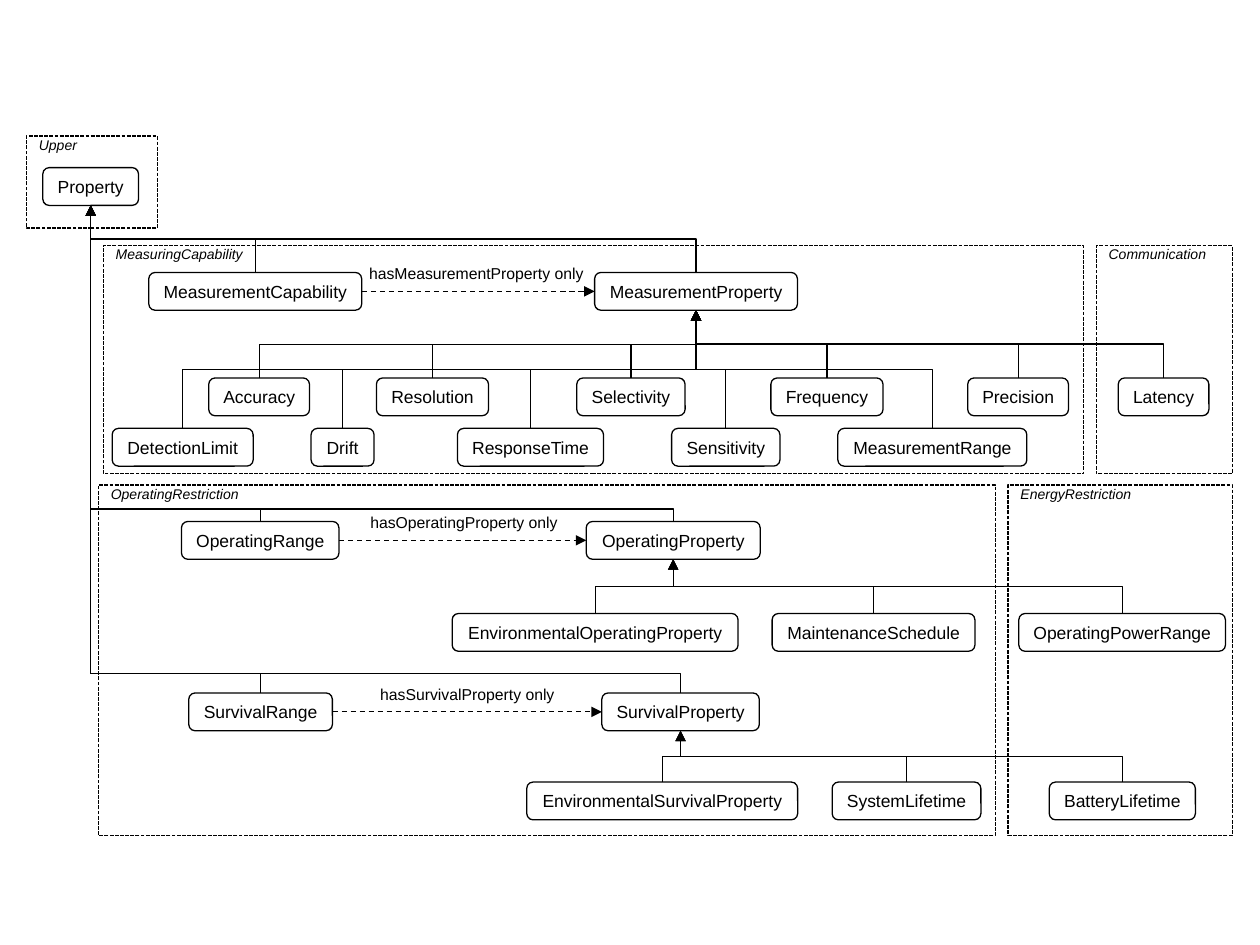
"""Build an ontology diagram of measuring, operating and survival properties."""
from lxml import etree
from pptx import Presentation
from pptx import util as u
from pptx.dml.color import RGBColor
from pptx.enum import dml, shapes, text
from pptx.oxml import ns

INK = "000000"
NODE_HEIGHT = 21.6
FRAME = {"word_wrap": True, "margin_top": 0, "vertical_anchor": text.MSO_ANCHOR.TOP}
FIT = {"word_wrap": False, "auto_size": text.MSO_AUTO_SIZE.SHAPE_TO_FIT_TEXT}
NODE = {**FIT, "vertical_anchor": text.MSO_ANCHOR.MIDDLE}

REGIONS = [
    ("Upper", 15.1, 77.8, 74.9, 52.6),
    ("MeasuringCapability", 59, 140.4, 560.2, 130.3),
    ("Communication", 626.4, 140.4, 77.8, 130.3),
    ("OperatingRestriction", 56.2, 277.2, 512.6, 200.2),
    ("EnergyRestriction", 576, 277.2, 128.2, 200.2),
]
ROOT = ("Property", 24.5, 54.7)
FAMILIES = [
    ("Property", 155.7, 0.5, [
        ("MeasurementCapability", 85, 121.7), ("MeasurementProperty", 339.8, 115.9)]),
    ("MeasurementProperty", 216, 0.5, [
        ("Accuracy", 119.3, 57.6), ("Resolution", 215.1, 64.1),
        ("Selectivity", 329.6, 61.9), ("Frequency", 440.5, 64.1),
        ("Precision", 553, 57.6), ("Latency", 639, 51.8)]),
    ("MeasurementProperty", 244.8, 0.5, [
        ("DetectionLimit", 64.1, 80.6), ("Drift", 177.8, 36),
        ("ResponseTime", 261.4, 83.5), ("Sensitivity", 383.8, 61.9),
        ("MeasurementRange", 478.8, 108)]),
    ("Property", 298, 0.04, [
        ("OperatingRange", 103.7, 90), ("OperatingProperty", 335, 99.4)]),
    ("OperatingProperty", 350.6, 0.5, [
        ("EnvironmentalOperatingProperty", 258.4, 163.4),
        ("MaintenanceSchedule", 441.2, 115.9), ("OperatingPowerRange", 582.2, 118.1)]),
    ("Property", 396, 0.04, [
        ("SurvivalRange", 107.9, 82.1), ("SurvivalProperty", 343.9, 90)]),
    ("SurvivalProperty", 446.9, 0.5, [
        ("EnvironmentalSurvivalProperty", 301, 154.8),
        ("SystemLifetime", 475.5, 85), ("BatteryLifetime", 599.6, 83.5)]),
]
RELATIONS = [
    ("MeasurementCapability", "MeasurementProperty", "hasMeasurementProperty only", 203.8, 139),
    ("OperatingRange", "OperatingProperty", "hasOperatingProperty only", 204.5, 123.8),
    ("SurvivalRange", "SurvivalProperty", "hasSurvivalProperty only", 210.2, 115.2),
]


def color(value):
    """Turn a hex string into a colour."""
    return RGBColor.from_string(value)


def apply(target, values):
    """Set each named attribute on the target."""
    for name, value in values.items():
        setattr(target, name, value)


def write(box, words, size, frame, align=text.PP_ALIGN.LEFT, italic=False):
    """Put one formatted line of text in a box."""
    apply(box.text_frame, frame)
    para = box.text_frame.paragraphs[0]
    para.alignment = align
    span = para.add_run()
    span.text = words
    apply(span.font, {"name": "Arial", "size": u.Pt(size), "italic": italic})
    span.font.color.rgb = color(INK)


def stroke(item, dash=None):
    """Draw a thin line, dashed if asked."""
    item.line.color.rgb = color(INK)
    apply(item.line, {"width": u.Pt(0.75), "dash_style": dash})


def add_outline(page, kind, left, top, width, height, dash=None):
    """Add an unfilled shape without a shadow."""
    box = page.shapes.add_shape(kind, *map(u.Pt, (left, top, width, height)))
    box.shadow.inherit = False
    box.fill.background()
    stroke(box, dash)
    return box


def add_region(page, name, left, top, width, height):
    """Add a dashed module frame with its name in the corner."""
    box = add_outline(page, shapes.MSO_SHAPE.RECTANGLE, left, top, width, height,
                      dml.MSO_LINE.SQUARE_DOT)
    write(box, name, 8, FRAME, italic=True)


def add_node(page, name, left, width, top):
    """Add a rounded class box."""
    box = add_outline(page, shapes.MSO_SHAPE.ROUNDED_RECTANGLE, left, top, width, NODE_HEIGHT)
    write(box, name, 10, NODE, text.PP_ALIGN.CENTER)
    return box


def add_arrow(page, kind, begin, end, dash=None):
    """Add a connector with a triangle at its end."""
    arrow = page.shapes.add_connector(kind, *map(int, (*begin, *end)))
    stroke(arrow, dash)
    etree.SubElement(arrow.line._get_or_add_ln(), ns.qn("a:tailEnd"), type="triangle")
    etree.SubElement(arrow._element.spPr, ns.qn("a:effectLst"))
    return arrow


def add_branch(page, child, parent, bend):
    """Link the top of a child to the bottom of its parent by a turned elbow."""
    start = child.left + child.width / 2, child.top
    goal = parent.left + parent.width / 2, parent.top + parent.height
    middle_x, middle_y = ((a + b) / 2 for a, b in zip(start, goal))
    half_x, half_y = ((a - b) / 2 for a, b in zip(start, goal))
    arrow = add_arrow(page, shapes.MSO_CONNECTOR.ELBOW,
                      (middle_x - half_y, middle_y + half_x),
                      (middle_x + half_y, middle_y - half_x))
    properties = arrow._element.spPr
    properties.find(ns.qn("a:xfrm")).set("rot", str(270 * 60000))
    guides = properties.find(ns.qn("a:prstGeom")).find(ns.qn("a:avLst"))
    etree.SubElement(guides, ns.qn("a:gd"), name="adj1", fmla=f"val {round(bend * 100000)}")


def add_relation(page, source, target, words, left, width):
    """Add a dashed arrow between two classes with its label above."""
    level = source.top + source.height / 2
    add_arrow(page, shapes.MSO_CONNECTOR.CURVE, (source.left + source.width, level),
              (target.left, level), dml.MSO_LINE.DASH)
    label = page.shapes.add_textbox(u.Pt(left), source.top - u.Pt(8.5), u.Pt(width), u.Pt(18))
    write(label, words, 9, FIT)


def main():
    """Build and save the deck."""
    deck = Presentation()
    apply(deck, {"slide_width": u.Pt(720), "slide_height": u.Pt(540)})
    page = deck.slides.add_slide(deck.slide_layouts[6])
    for region in REGIONS:
        add_region(page, *region)
    nodes = {ROOT[0]: add_node(page, *ROOT, 95.8)}
    for parent, top, bend, children in FAMILIES:
        for name, left, width in children:
            nodes[name] = add_node(page, name, left, width, top)
            add_branch(page, nodes[name], nodes[parent], bend)
    for source, target, *label in RELATIONS:
        add_relation(page, nodes[source], nodes[target], *label)
    deck.save("out.pptx")


if __name__ == "__main__":
    main()
